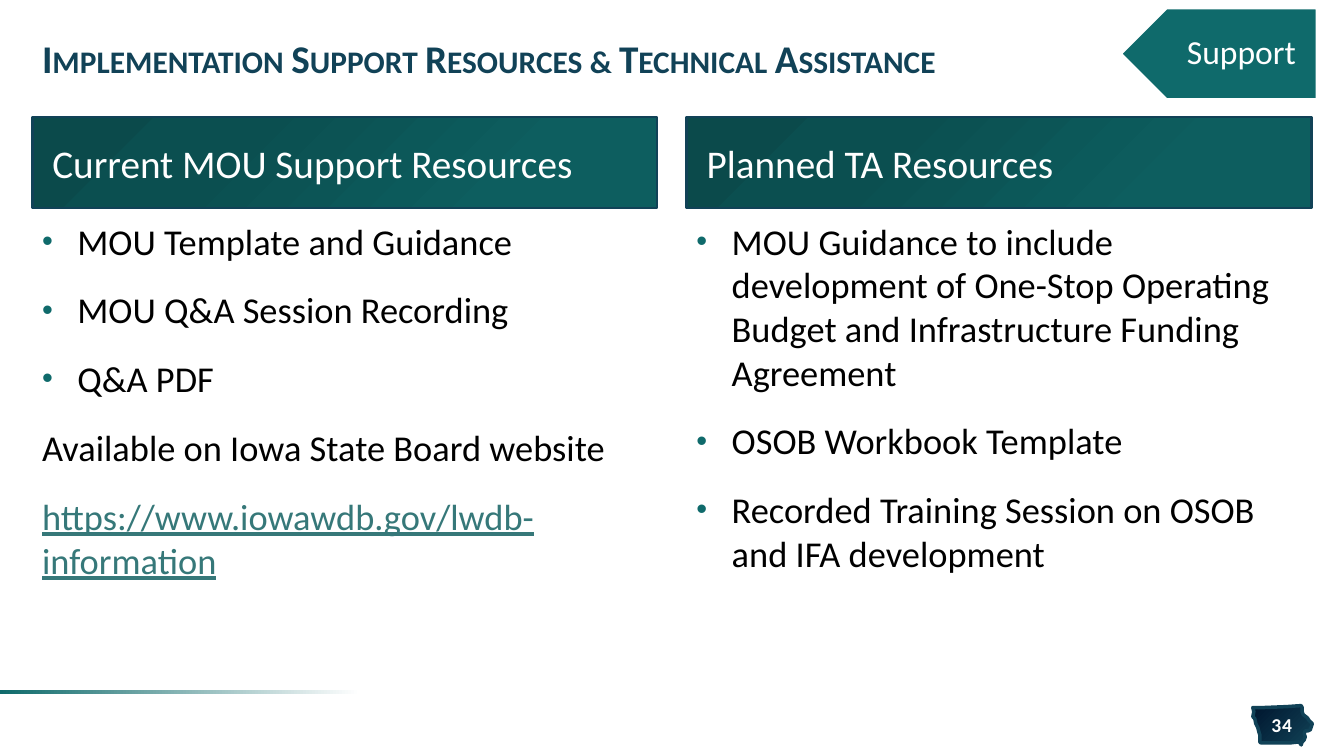
from dataclasses import dataclass

from lxml.etree import SubElement
from pptx import Presentation
from pptx.dml.color import RGBColor
from pptx.enum.shapes import MSO_SHAPE as Shape
from pptx.enum.text import MSO_ANCHOR as Anchor, MSO_AUTO_SIZE as Fit, PP_ALIGN as Align
from pptx.oxml.ns import qn
from pptx.util import Cm, Pt

TITLE = "Implementation Support Resources & Technical Assistance"
TAG = "Support"
PAGE = "34"
# Each column: heading, then (style, text) lines
COLUMNS = [
    ("Current MOU Support Resources", [
        ("bullet", "MOU Template and Guidance"),
        ("bullet", "MOU Q&A Session Recording"),
        ("bullet", "Q&A PDF"),
        ("plain", "Available on Iowa State Board website"),
        ("link", "https://www.iowawdb.gov/lwdb-information"),
    ]),
    ("Planned TA Resources", [
        ("bullet", "MOU Guidance to include development of One-Stop Operating "
                   "Budget and Infrastructure Funding Agreement"),
        ("bullet", "OSOB Workbook Template"),
        ("bullet", "Recorded Training Session on OSOB and IFA development"),
    ]),
]
# State outline, in hundredths of an inch
STATE = [
    (1291, 700), (1277, 701), (1253, 702), (1243, 702), (1244, 706),
    (1243, 711), (1245, 713), (1246, 718), (1248, 722), (1249, 726),
    (1250, 729), (1250, 736), (1251, 737), (1280, 737), (1289, 736),
    (1291, 739), (1292, 736), (1294, 734), (1295, 731), (1294, 728),
    (1295, 725), (1298, 725), (1300, 724), (1302, 718), (1299, 715),
    (1297, 712), (1293, 709), (1292, 706), (1292, 702),
]


@dataclass(frozen=True)
class Theme:
    font: str = "Calibri"
    navy: str = "114257"
    night: str = "00162E"
    teal: str = "0F6A6B"
    link: str = "367879"
    white: str = "FFFFFF"
    black: str = "000000"
    head: int = 28
    body: int = 26
    tag: int = 24
    page: int = 14
    gap: int = 18


T = Theme()
HEAD_STOPS = [(0, "0D5E5F"), (23, "0D5E5F"), (69, "0B4F50"), (97, "0B4A4B")]
LEFT, STEP, WIDE = 0.81, 16.49, 15.75


def rgb(code):
    return RGBColor.from_string(code)


def sub(node, tag, **attrs):
    return SubElement(node, qn(f"a:{tag}"), {k: str(v) for k, v in attrs.items()})


def place(shape, *box):
    shape.left, shape.top, shape.width, shape.height = map(Cm, box)


def shade(shape, stops, angle=None):
    """Fill with a linear gradient, or a radial one from the lower right corner."""
    shape.fill.gradient()
    grad = shape._element.spPr.find(qn("a:gradFill"))
    for child in list(grad):
        grad.remove(child)
    row = sub(grad, "gsLst")
    for pos, code in stops:
        sub(sub(row, "gs", pos=pos * 1000), "srgbClr", val=code)
    if angle is None:
        sub(sub(grad, "path", path="circle"), "fillToRect", l=100000, t=100000)
    else:
        sub(grad, "lin", ang=angle * 60000, scaled=0)


def edge(shape, code, width):
    shape.line.color.rgb = rgb(code)
    shape.line.width = Pt(width)


def style(par, size, code, bold=False):
    for run in par.runs:
        font = run.font
        font.name, font.size, font.bold = T.font, Pt(size), bold
        font.color.rgb = rgb(code)


def setup(frame, anchor, pads=(0.25, 0.13, 0.25, 0.13)):
    frame.word_wrap, frame.auto_size = True, Fit.NONE
    frame.vertical_anchor = anchor
    (frame.margin_left, frame.margin_top,
     frame.margin_right, frame.margin_bottom) = map(Cm, pads)


def indent(par, bullet):
    props = par._p.get_or_add_pPr()
    hang = Cm(0.89) if bullet else 0
    props.set("marL", str(hang))
    props.set("indent", str(-hang))
    if bullet:
        sub(sub(props, "buClr"), "srgbClr", val=T.teal)
        sub(props, "buSzPct", val=85000)
        sub(props, "buFont", typeface="Arial")
        sub(props, "buChar", char="•")
    else:
        sub(props, "buNone")


def add_title(shape):
    place(shape, LEFT, 0.61, 32.23, 1.9)
    frame = shape.text_frame
    frame.text = TITLE
    setup(frame, Anchor.MIDDLE)
    par = frame.paragraphs[0]
    par.alignment, par.line_spacing = Align.LEFT, 0.85
    style(par, T.head, T.navy, True)
    par.runs[0].font._element.set("cap", "small")


def add_head(shape, left, text):
    place(shape, left, 2.95, WIDE, 2.29)
    shade(shape, HEAD_STOPS)
    edge(shape, T.navy, 2)
    frame = shape.text_frame
    frame.text = text
    setup(frame, Anchor.MIDDLE, (0.51, 0, 0.51, 0))
    par = frame.paragraphs[0]
    indent(par, False)
    par.space_before = Pt(0)
    style(par, T.head, T.white)


def add_list(shape, left, lines):
    place(shape, left, 5.38, WIDE, 11.81)
    frame = shape.text_frame
    frame.text = "\n".join(text for _, text in lines)
    setup(frame, Anchor.TOP)
    for i, (par, (kind, _)) in enumerate(zip(frame.paragraphs, lines)):
        indent(par, kind == "bullet")
        par.space_before = Pt(T.gap if i else 0)
        style(par, T.body, T.link if kind == "link" else T.black)
        if kind == "link":
            par.runs[0].font.underline = True


def add_label(shapes, text, box, pads, size, bold=False):
    frame = shapes.add_textbox(*map(Cm, box)).text_frame
    frame.text = text
    setup(frame, Anchor.MIDDLE, pads)
    par = frame.paragraphs[0]
    par.alignment = Align.CENTER
    style(par, size, T.white, bold)
    return par


def add_decor(shapes):
    rule = shapes.add_shape(Shape.RECTANGLE, *map(Cm, (0, 17.4, 9.65, 0.08)))
    rule.shadow.inherit = False
    rule.line.fill.background()
    shade(rule, [(6, T.white), (100, T.teal)], 180)

    pen = shapes.build_freeform(*STATE[0], scale=Cm(0.0254))
    pen.add_line_segments(STATE[1:], close=True)
    state = pen.convert_to_shape()
    state.shadow.inherit = False
    shade(state, [(0, T.night), (100, T.navy)], 45)
    edge(state, T.navy, 2.5)

    flag = shapes.add_shape(Shape.PENTAGON, *map(Cm, (28.24, 0.2, 4.95, 2.31)))
    flag.rotation = 180
    flag.shadow.inherit = False
    flag.fill.solid()
    flag.fill.fore_color.rgb = rgb(T.teal)
    edge(flag, T.white, 2)


def main():
    deck = Presentation()
    deck.slide_width, deck.slide_height = Cm(33.87), Cm(19.05)
    slide = deck.slides.add_slide(deck.slide_layouts.get_by_name("Comparison"))
    shapes, slots = slide.shapes, slide.placeholders
    add_title(shapes.title)
    for i, (head, lines) in enumerate(COLUMNS):
        left = LEFT + i * STEP
        add_head(slots[2 * i + 1], left, head)
        add_list(slots[2 * i + 2], left, lines)
    add_decor(shapes)
    tag = add_label(shapes, TAG, (28.83, 0.2, 4.37, 2.31),
                    (1.02, 0.25, 0.48, 0.25), T.tag)
    tag.line_spacing = 0.9
    page = add_label(shapes, PAGE, (31.65, 17.98, 1.3, 0.58),
                     (0, 0.13, 0, 0.13), T.page, True)
    page.runs[0].font._element.set("spc", "50")
    deck.save("out.pptx")


if __name__ == "__main__":
    main()
